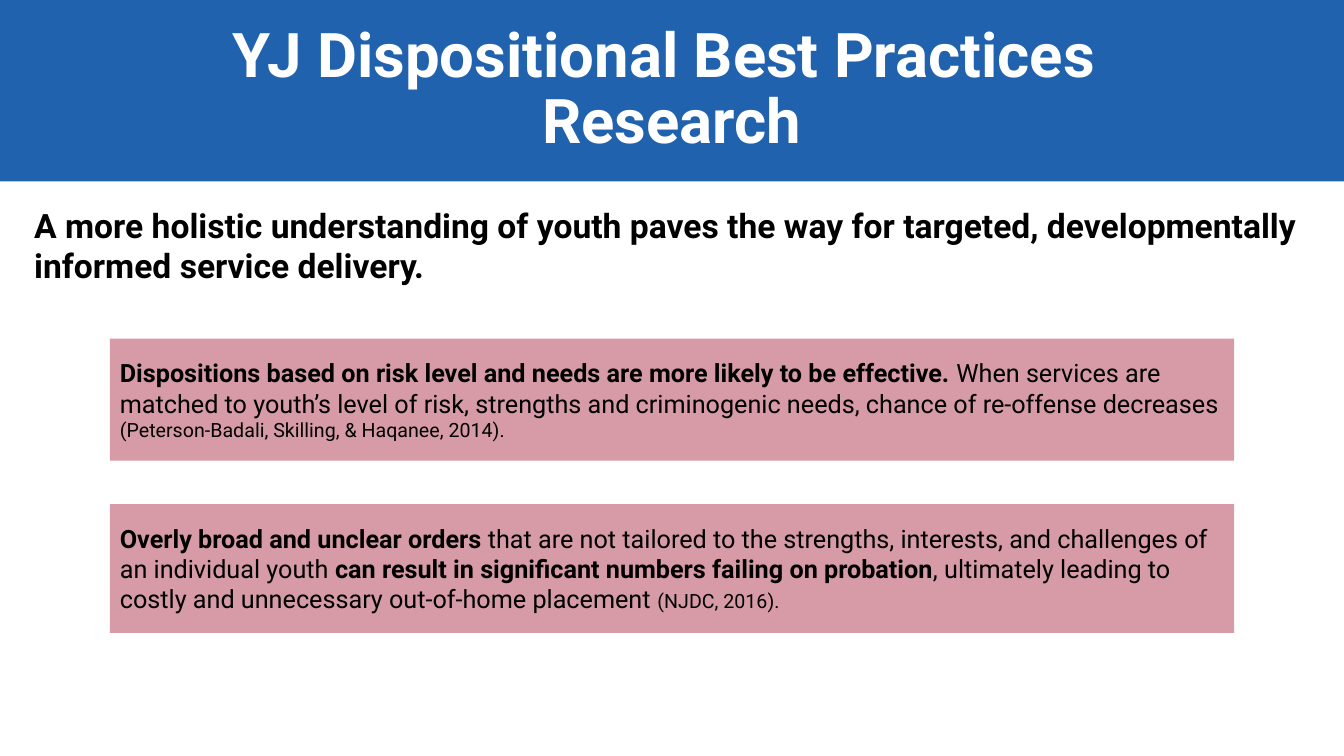
from lxml import etree
from pptx import Presentation
from pptx.dml.color import RGBColor
from pptx.enum import shapes, text
from pptx.oxml import ns
from pptx.util import Inches, Pt

BLUE = RGBColor(0x21, 0x62, 0xAE)
ROSE = RGBColor(0xAF, 0x39, 0x4E)
WHITE = RGBColor(0xFF, 0xFF, 0xFF)
BLACK = RGBColor(0x00, 0x00, 0x00)
FONT = "Roboto"
BODY_SIZE = 18
CITATION_SIZE = 14

TITLE_LINES = ["YJ Dispositional Best Practices ", "Research"]
LEAD = ("A more holistic understanding of youth paves the way for targeted, "
        "developmentally informed service delivery.")
FINDINGS = [
    (3.36, 1.21, [
        ("Dispositions based on risk level and needs are more likely to be effective. ",
         BODY_SIZE, True),
        ("When services are matched to youth’s level of risk, strengths and "
         "criminogenic needs, chance of re-offense decreases ", BODY_SIZE, False),
        ("(Peterson-Badali, Skilling, & Haqanee, 2014).", CITATION_SIZE, False),
    ]),
    (5, 1.28, [
        ("Overly broad and unclear orders ", BODY_SIZE, True),
        ("that are not tailored to the strengths, interests, and challenges of "
         "an individual youth ", BODY_SIZE, False),
        ("can result in significant numbers failing on probation", BODY_SIZE, True),
        (", ultimately leading to costly and unnecessary out-of-home placement ",
         BODY_SIZE, False),
        ("(NJDC, 2016).", CITATION_SIZE, False),
    ]),
]


def add_run(paragraph, words, size, bold, color=BLACK):
    """Append one formatted run to a paragraph."""
    run = paragraph.add_run()
    run.text = words
    run.font.name = FONT
    run.font.size = Pt(size)
    run.font.bold = bold
    run.font.color.rgb = color


def add_panel(slide, left, top, width, height, color, opacity=100):
    """Add a borderless rectangle and return its text frame."""
    shape = slide.shapes.add_shape(
        shapes.MSO_SHAPE.RECTANGLE,
        Inches(left), Inches(top), Inches(width), Inches(height))
    shape.shadow.inherit = False
    shape.fill.solid()
    shape.fill.fore_color.rgb = color
    shape.line.fill.background()
    if opacity < 100:
        fill_color = shape.element.spPr.find(ns.qn("a:solidFill"))[0]
        alpha = etree.SubElement(fill_color, ns.qn("a:alpha"))
        alpha.set("val", str(opacity * 1000))
    frame = shape.text_frame
    frame.word_wrap = True
    frame.vertical_anchor = text.MSO_ANCHOR.MIDDLE
    return frame


def add_title(slide):
    """Add the full-width banner with the centred title."""
    frame = add_panel(slide, 0, 0, 13.33, 1.8, BLUE)
    for index, line in enumerate(TITLE_LINES):
        paragraph = frame.add_paragraph() if index else frame.paragraphs[0]
        paragraph.alignment = text.PP_ALIGN.CENTER
        paragraph.line_spacing = 0.9
        add_run(paragraph, line, 44, True, WHITE)


def add_lead(slide):
    """Add the bold lead statement below the banner."""
    box = slide.shapes.add_textbox(
        Inches(0.24), Inches(1.98), Inches(12.85), Inches(0.91))
    box.text_frame.word_wrap = True
    box.text_frame.auto_size = text.MSO_AUTO_SIZE.SHAPE_TO_FIT_TEXT
    add_run(box.text_frame.paragraphs[0], LEAD, 24, True)


def add_finding(slide, top, height, runs):
    """Add a translucent panel with one research finding."""
    frame = add_panel(slide, 1.09, top, 11.15, height, ROSE, opacity=50)
    paragraph = frame.paragraphs[0]
    paragraph.alignment = text.PP_ALIGN.LEFT
    for words, size, bold in runs:
        add_run(paragraph, words, size, bold)


def main():
    """Build and save the slide."""
    presentation = Presentation()
    presentation.slide_width = Inches(13.33)
    presentation.slide_height = Inches(7.5)
    slide = presentation.slides.add_slide(presentation.slide_layouts[6])
    add_title(slide)
    add_lead(slide)
    for top, height, runs in FINDINGS:
        add_finding(slide, top, height, runs)
    presentation.save("out.pptx")


if __name__ == "__main__":
    main()
